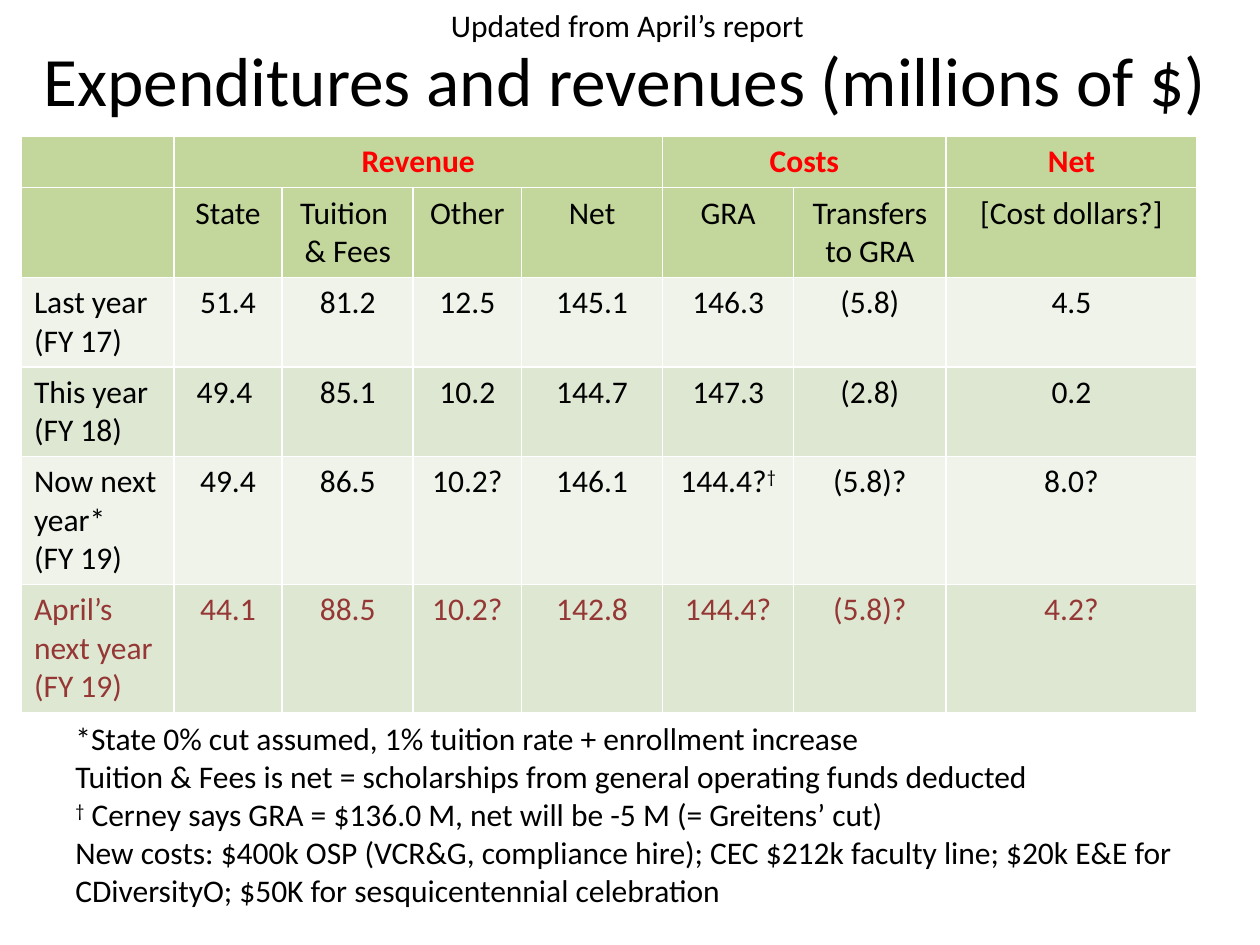
from pptx import Presentation
from pptx.dml.color import RGBColor
from pptx.enum.text import MSO_ANCHOR, MSO_AUTO_SIZE, PP_ALIGN
from pptx.util import Inches, Pt

BLACK = RGBColor(0x00, 0x00, 0x00)
RED = RGBColor(0xFF, 0x00, 0x00)
DARK_RED = RGBColor(0x95, 0x37, 0x35)
HEADER_GREEN = RGBColor(0xC3, 0xD6, 0x9B)
BAND_COLORS = (RGBColor(0xEF, 0xF3, 0xEA), RGBColor(0xDE, 0xE7, 0xD1))
FONT = "Calibri"
DAGGER = "†"

TITLE = "Expenditures and revenues (millions of $)"
UPDATE_NOTE = "Updated from April’s report"
COLUMN_WIDTHS = (1.21, 0.86, 1.04, 0.86, 1.12, 1.04, 1.21, 1.99)
ROW_HEIGHT = 0.41
HEADER_ROWS = 2
HEADER_MERGES = ((1, 4), (5, 6))  # first and last column of each group
ROWS = [
    ["", "Revenue", "", "", "", "Costs", "", "Net"],
    ["", "State", "Tuition \n& Fees", "Other", "Net", "GRA", "Transfers to GRA", "[Cost dollars?]"],
    ["Last year (FY 17)", "51.4", "81.2", "12.5", "145.1", "146.3", "(5.8)", "4.5"],
    ["This year (FY 18)", "49.4 ", "85.1", "10.2", "144.7", "147.3", "(2.8)", "0.2"],
    ["Now next year*\n(FY 19)", "49.4", "86.5", "10.2?", "146.1", "144.4?†", "(5.8)?", "8.0?"],
    ["April’s next year\n(FY 19)", "44.1", "88.5", "10.2?", "142.8", "144.4?", "(5.8)?", "4.2?"],
]
FOOTNOTES = [
    "*State 0% cut assumed, 1% tuition rate + enrollment increase",
    "Tuition & Fees is net = scholarships from general operating funds deducted",
    "† Cerney says GRA = $136.0 M, net will be -5 M (= Greitens’ cut)",
    "New costs: $400k OSP (VCR&G, compliance hire); CEC $212k faculty line; "
    "$20k E&E for CDiversityO; $50K for sesquicentennial celebration",
]


def write_text(text_frame, text, color=BLACK, size=18, bold=False, alignment=PP_ALIGN.LEFT):
    """Fill a text frame, one paragraph per line, with daggers superscripted."""
    for index, line in enumerate(text.split("\n")):
        paragraph = text_frame.paragraphs[0] if index == 0 else text_frame.add_paragraph()
        paragraph.alignment = alignment
        before, dagger, after = line.partition(DAGGER)
        for part in filter(None, (before, dagger, after)):
            run = paragraph.add_run()
            run.text = part
            run.font.name = FONT
            run.font.size = Pt(size)
            run.font.bold = bold
            run.font.color.rgb = color
            if part == DAGGER:
                run._r.get_or_add_rPr().set("baseline", "30000")


def add_title(slide):
    title = slide.shapes.title
    title.left, title.top, title.width, title.height = 0, 0, Inches(9.92), Inches(1.25)
    title.text_frame.vertical_anchor = MSO_ANCHOR.MIDDLE
    write_text(title.text_frame, TITLE, size=39.6, alignment=PP_ALIGN.CENTER)


def add_budget_table(slide):
    table = slide.shapes.add_table(
        len(ROWS), len(COLUMN_WIDTHS), Inches(0.17), Inches(1.08),
        Inches(sum(COLUMN_WIDTHS)), Inches(ROW_HEIGHT * len(ROWS)),
    ).table
    for column, width in zip(table.columns, COLUMN_WIDTHS):
        column.width = Inches(width)
    for first, last in HEADER_MERGES:
        table.cell(0, first).merge(table.cell(0, last))

    for row_index, row in enumerate(ROWS):
        if row_index < HEADER_ROWS:
            fill_color = HEADER_GREEN
        else:
            fill_color = BAND_COLORS[row_index % 2]
        text_color = {0: RED, len(ROWS) - 1: DARK_RED}.get(row_index, BLACK)
        for column_index, text in enumerate(row):
            cell = table.cell(row_index, column_index)
            cell.fill.solid()
            cell.fill.fore_color.rgb = fill_color
            alignment = PP_ALIGN.CENTER if column_index else PP_ALIGN.LEFT
            write_text(cell.text_frame, text, text_color,
                       bold=row_index == 0, alignment=alignment)


def add_text_box(slide, text, left, top, width, height, wrap):
    box = slide.shapes.add_textbox(Inches(left), Inches(top), Inches(width), Inches(height))
    box.text_frame.word_wrap = wrap
    box.text_frame.auto_size = MSO_AUTO_SIZE.SHAPE_TO_FIT_TEXT
    write_text(box.text_frame, text)


def main():
    presentation = Presentation()
    presentation.slide_width, presentation.slide_height = Inches(10), Inches(7.5)
    title_only = presentation.slide_layouts[5]
    slide = presentation.slides.add_slide(title_only)
    add_title(slide)
    add_budget_table(slide)
    add_text_box(slide, "\n".join(FOOTNOTES), 0.5, 5.66, 9, 1.62, wrap=True)
    add_text_box(slide, UPDATE_NOTE, 3.48, 0, 3.04, 0.4, wrap=False)
    presentation.save("out.pptx")


if __name__ == "__main__":
    main()
